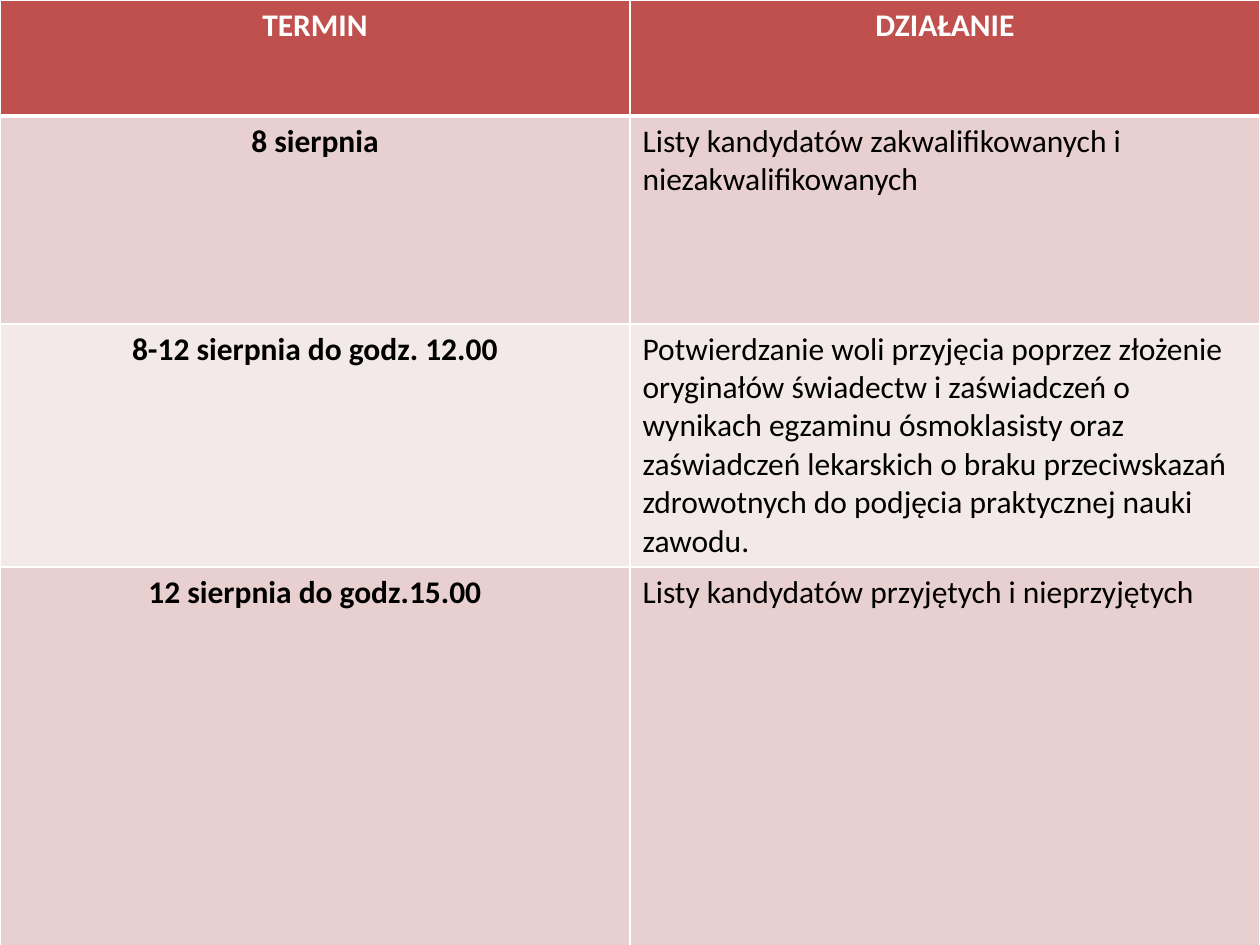
from dataclasses import dataclass

from lxml import etree
from pptx import Presentation
from pptx import util as u
from pptx.dml.color import RGBColor
from pptx.enum import text
from pptx.oxml.ns import qn

COLORS = {
    "header": "C0504D",
    "band_dark": "E8D0D0",
    "band_light": "F4E9E9",
    "white": "FFFFFF",
    "black": "000000",
}
WIDTH, HEIGHT = u.Inches(10), u.Inches(7.5)
COLUMNS = 2
THIN, THICK = 1, 3


@dataclass
class Row:
    term: str
    action: str
    height: float  # inches
    fill: str
    header: bool = False


ROWS = [
    Row("TERMIN", "DZIAŁANIE", 0.92, "header", header=True),
    Row("8 sierpnia", "Listy kandydatów zakwalifikowanych i niezakwalifikowanych",
        1.65, "band_dark"),
    Row("8-12 sierpnia do godz. 12.00",
        "Potwierdzanie woli przyjęcia poprzez złożenie oryginałów świadectw "
        "i zaświadczeń o wynikach egzaminu ósmoklasisty oraz zaświadczeń "
        "lekarskich o braku przeciwskazań zdrowotnych do podjęcia praktycznej "
        "nauki zawodu.", 1.89, "band_light"),
    Row("12 sierpnia do godz.15.00", "Listy kandydatów przyjętych i nieprzyjętych",
        3.05, "band_dark"),
]


def set_borders(cell, top: int, bottom: int) -> None:
    """Draw white cell borders; widths are in points."""
    props = cell._tc.get_or_add_tcPr()
    sides = {"lnL": THIN, "lnR": THIN, "lnT": top, "lnB": bottom}
    for i, (side, width) in enumerate(sides.items()):
        line = etree.Element(qn(f"a:{side}"), w=str(u.Pt(width)))
        fill = etree.SubElement(line, qn("a:solidFill"))
        etree.SubElement(fill, qn("a:srgbClr"), val=COLORS["white"])
        props.insert(i, line)  # borders must precede the fill


def fill_cell(cell, content: str, row: Row, is_term: bool) -> None:
    cell.fill.solid()
    cell.fill.fore_color.rgb = RGBColor.from_string(COLORS[row.fill])
    cell.text = content
    p = cell.text_frame.paragraphs[0]
    emphasized = row.header or is_term
    p.alignment = text.PP_ALIGN.CENTER if emphasized else text.PP_ALIGN.LEFT
    p.font.name = "Calibri"
    p.font.size = u.Pt(18)
    p.font.bold = emphasized
    p.font.color.rgb = RGBColor.from_string(COLORS["white" if row.header else "black"])


def add_schedule(s, rows: list[Row]) -> None:
    height = u.Inches(sum(row.height for row in rows))
    table = s.shapes.add_table(len(rows), COLUMNS, 0, 0, WIDTH, height).table
    for column in table.columns:
        column.width = WIDTH // COLUMNS
    for i, row in enumerate(rows):
        table.rows[i].height = u.Inches(row.height)
        top = THICK if i and rows[i - 1].header else THIN
        bottom = THICK if row.header else THIN
        for j, content in enumerate((row.term, row.action)):
            cell = table.cell(i, j)
            fill_cell(cell, content, row, is_term=j == 0)
            set_borders(cell, top, bottom)


def main() -> None:
    prs = Presentation()
    prs.slide_width, prs.slide_height = WIDTH, HEIGHT
    s = prs.slides.add_slide(prs.slide_layouts[6])
    add_schedule(s, ROWS)
    prs.save("out.pptx")


if __name__ == "__main__":
    main()
